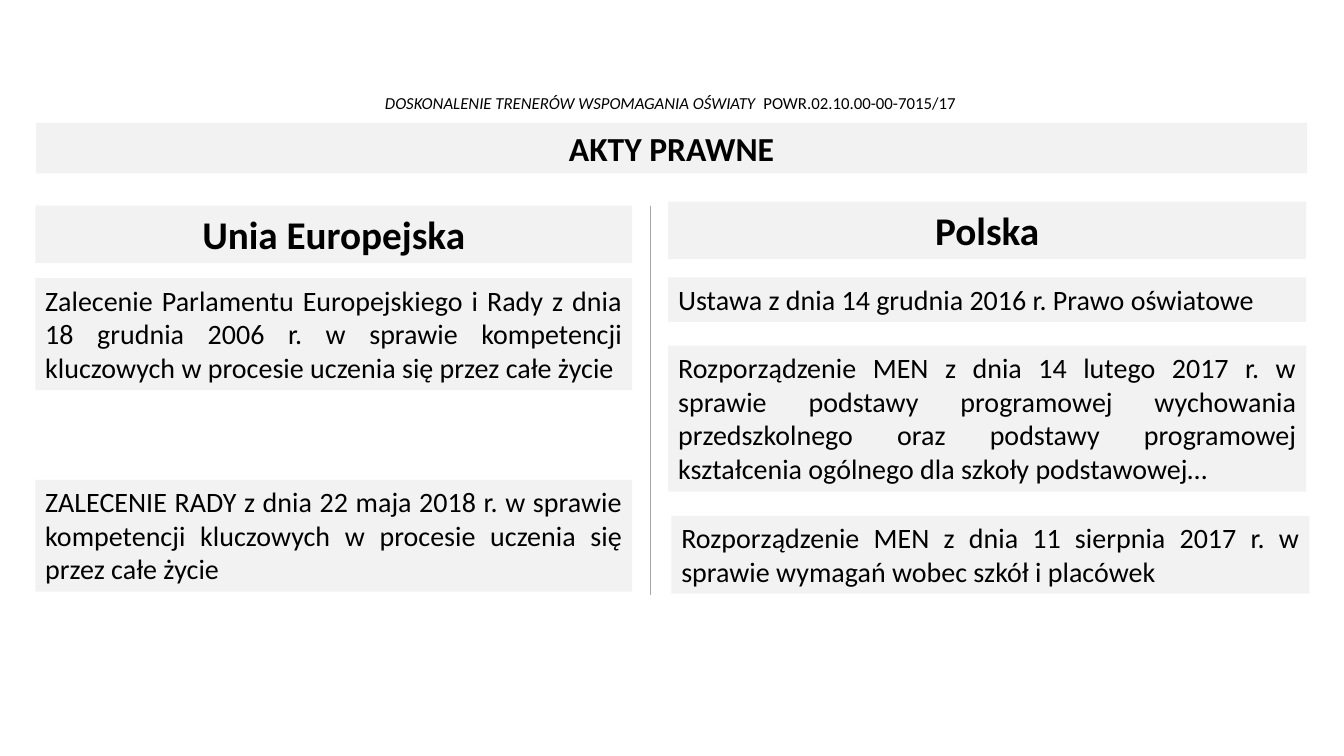
from dataclasses import dataclass

from lxml.etree import SubElement
from pptx import Presentation
from pptx.dml.color import RGBColor
from pptx.enum.shapes import MSO_CONNECTOR, MSO_SHAPE
from pptx.enum.text import MSO_ANCHOR, MSO_AUTO_SIZE, PP_ALIGN
from pptx.oxml.ns import qn
from pptx.util import Cm, Pt


@dataclass(frozen=True)
class Theme:
    font: str = "Calibri"
    ink: RGBColor = RGBColor(0x00, 0x00, 0x00)
    panel: RGBColor = RGBColor(0xF2, 0xF2, 0xF2)
    rule: RGBColor = RGBColor(0xA6, 0xA6, 0xA6)
    project: Pt = Pt(12)
    body: Pt = Pt(20)
    title: Pt = Pt(24)
    heading: Pt = Pt(28)


theme = Theme()
deck = Presentation()
deck.slide_width, deck.slide_height = Cm(33.87), Cm(19.05)
page = deck.slides.add_slide(deck.slide_layouts[6])


def add_span(para, text, size, bold=False, italic=False):
    span = para.add_run()
    span.text = text
    span.font.name = theme.font
    span.font.size = size
    span.font.bold = bold
    span.font.italic = italic
    span.font.color.rgb = theme.ink


def add_panel(left, top, width, height, text, size, heading=True):
    box = page.shapes.add_shape(
        MSO_SHAPE.RECTANGLE, Cm(left), Cm(top), Cm(width), Cm(height))
    box.shadow.inherit = False
    box.fill.solid()
    box.fill.fore_color.rgb = theme.panel
    box.line.fill.background()
    frame = box.text_frame
    frame.word_wrap = True
    frame.auto_size = MSO_AUTO_SIZE.SHAPE_TO_FIT_TEXT
    frame.vertical_anchor = MSO_ANCHOR.TOP
    para = frame.paragraphs[0]
    para.alignment = PP_ALIGN.CENTER if heading else PP_ALIGN.JUSTIFY
    add_span(para, text, size, bold=heading)


# Project line
project = page.shapes.add_textbox(Cm(2.34), Cm(0), Cm(29.11), Cm(3.1))
project.text_frame.word_wrap = True
project.text_frame.vertical_anchor = MSO_ANCHOR.BOTTOM
project.text_frame.margin_bottom = Cm(0.25)
para = project.text_frame.paragraphs[0]
para.alignment = PP_ALIGN.CENTER
para.line_spacing = 0.9
add_span(para, "DOSKONALENIE TRENERÓW WSPOMAGANIA OŚWIATY  ", theme.project, italic=True)
add_span(para, "POWR.02.10.00-00-7015/17", theme.project)

# Title bar
add_panel(0.91, 3.1, 32.03, 1.27, "AKTY PRAWNE", theme.title)

# Column headings: left, top, width, text
headings = [
    (0.89, 5.18, 15.04, "Unia Europejska"),
    (16.84, 5.08, 16.08, "Polska"),
]
for left, top, width, text in headings:
    add_panel(left, top, width, 1.45, text, theme.heading)

# Legal acts: left, top, width, height, text
acts = [
    (0.89, 7.01, 15.04, 2.82,
     "Zalecenie Parlamentu Europejskiego i Rady z dnia 18 grudnia 2006 r. "
     "w sprawie kompetencji kluczowych w procesie uczenia się przez całe życie"),
    (0.89, 12.09, 15.04, 2.82,
     "ZALECENIE RADY z dnia 22 maja 2018 r. w sprawie kompetencji kluczowych "
     "w procesie uczenia się przez całe życie"),
    (16.84, 6.99, 16.08, 1.12, "Ustawa z dnia 14 grudnia 2016 r. Prawo oświatowe"),
    (16.84, 8.71, 16.08, 3.68,
     "Rozporządzenie MEN z dnia 14 lutego 2017 r. w sprawie podstawy programowej "
     "wychowania przedszkolnego oraz podstawy programowej kształcenia ogólnego "
     "dla szkoły podstawowej…"),
    (16.92, 13, 16.08, 1.96,
     "Rozporządzenie MEN z dnia 11 sierpnia 2017 r. w sprawie wymagań wobec "
     "szkół i placówek"),
]
for left, top, width, height, text in acts:
    add_panel(left, top, width, height, text, theme.body, heading=False)

# Divider between the columns
divider = page.shapes.add_connector(
    MSO_CONNECTOR.STRAIGHT, Cm(16.38), Cm(5.18), Cm(16.38), Cm(14.99))
divider.line.color.rgb = theme.rule
divider.line.width = Pt(0.5)
SubElement(divider.element.spPr, qn("a:effectLst"))

deck.save("out.pptx")
